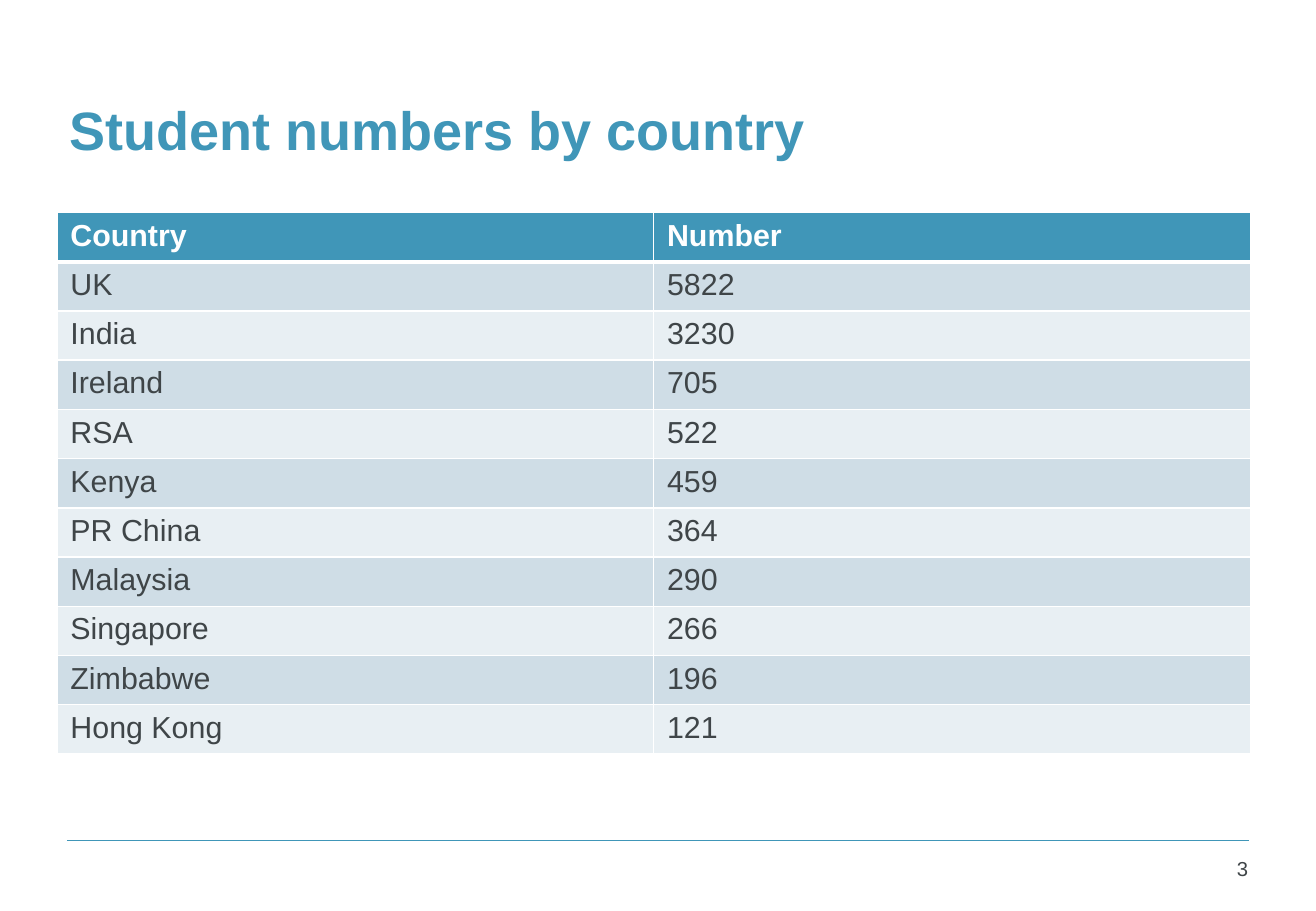
import lxml.etree
import pptx
import pptx.dml.color
import pptx.enum.shapes
import pptx.enum.text
import pptx.oxml.ns
import pptx.util

Inches = pptx.util.Inches
RGBColor = pptx.dml.color.RGBColor
TEAL = RGBColor(0x40, 0x96, 0xB8)
DARK = RGBColor(0x3F, 0x45, 0x48)
WHITE = RGBColor(0xFF, 0xFF, 0xFF)
BAND_DARK = RGBColor(0xCF, 0xDD, 0xE6)
BAND_LIGHT = RGBColor(0xE8, 0xEF, 0xF3)

STUDENT_NUMBERS = [
    ("Country", "Number"),
    ("UK", "5822"),
    ("India", "3230"),
    ("Ireland", "705"),
    ("RSA", "522"),
    ("Kenya", "459"),
    ("PR China", "364"),
    ("Malaysia", "290"),
    ("Singapore", "266"),
    ("Zimbabwe", "196"),
    ("Hong Kong", "121"),
]


def format_text(text_frame, size, color, bold=False):
    """Set the font of every run in a text frame."""
    for paragraph in text_frame.paragraphs:
        for run in paragraph.runs:
            run.font.name = "Arial"
            run.font.size = pptx.util.Pt(size)
            run.font.bold = bold
            run.font.color.rgb = color


def add_borders(cell, widths):
    """Draw white borders on a cell, with widths in points by side."""
    properties = cell._tc.get_or_add_tcPr()
    for index, (side, width) in enumerate(widths.items()):
        line = lxml.etree.Element(
            pptx.oxml.ns.qn(f"a:ln{side}"), w=str(pptx.util.Pt(width))
        )
        fill = lxml.etree.SubElement(line, pptx.oxml.ns.qn("a:solidFill"))
        lxml.etree.SubElement(fill, pptx.oxml.ns.qn("a:srgbClr"), val=str(WHITE))
        properties.insert(index, line)


def add_title(slide, left, top, width, height):
    """Place and format the title placeholder."""
    title = slide.shapes.title
    title.left, title.top, title.width, title.height = left, top, width, height
    text_frame = title.text_frame
    text_frame.text = "Student numbers by country"
    text_frame.vertical_anchor = pptx.enum.text.MSO_ANCHOR.MIDDLE
    text_frame.paragraphs[0].alignment = pptx.enum.text.PP_ALIGN.LEFT
    format_text(text_frame, 32, TEAL, bold=True)


def add_student_table(slide, left, top, width, height):
    """Add the banded table of students by country."""
    row_count, column_count = len(STUDENT_NUMBERS), len(STUDENT_NUMBERS[0])
    table = slide.shapes.add_table(
        row_count, column_count, left, top, width, height
    ).table
    for row_index, values in enumerate(STUDENT_NUMBERS):
        is_header = row_index == 0
        band = BAND_DARK if row_index % 2 else BAND_LIGHT
        for column_index, value in enumerate(values):
            cell = table.cell(row_index, column_index)
            cell.text_frame.text = value
            cell.margin_left = cell.margin_right = Inches(0.11)
            cell.fill.solid()
            cell.fill.fore_color.rgb = TEAL if is_header else band
            format_text(cell.text_frame, 18, WHITE if is_header else DARK, is_header)
            add_borders(cell, {
                "L": 1,
                "R": 1,
                "T": 3 if row_index == 1 else 1,
                "B": 3 if is_header else 1,
            })


def add_footer(slide, left, top, width):
    """Add the footer rule and the slide number beneath its right end."""
    rule = slide.shapes.add_connector(
        pptx.enum.shapes.MSO_CONNECTOR.STRAIGHT, left, top, left + width, top
    )
    rule.line.color.rgb = TEAL
    rule.line.width = pptx.util.Pt(1)
    lxml.etree.SubElement(rule._element.spPr, pptx.oxml.ns.qn("a:effectLst"))
    number = slide.shapes.add_textbox(
        left + width - Inches(0.68), top + Inches(0.08), Inches(0.77), Inches(0.37)
    )
    text_frame = number.text_frame
    text_frame.word_wrap = True
    text_frame.text = "3"
    text_frame.paragraphs[0].alignment = pptx.enum.text.PP_ALIGN.RIGHT
    format_text(text_frame, 12, DARK)


def main():
    """Build the slide and save the presentation."""
    presentation = pptx.Presentation()
    presentation.slide_width = Inches(10.83)
    presentation.slide_height = Inches(7.5)
    slide = presentation.slides.add_slide(presentation.slide_layouts[5])
    left, width = Inches(0.47), Inches(9.82)
    add_title(slide, left, Inches(0.44), width, Inches(1.25))
    add_student_table(slide, left, Inches(1.75), width, Inches(4.46))
    add_footer(slide, Inches(0.55), Inches(6.92), Inches(9.73))
    presentation.save("out.pptx")


if __name__ == "__main__":
    main()
